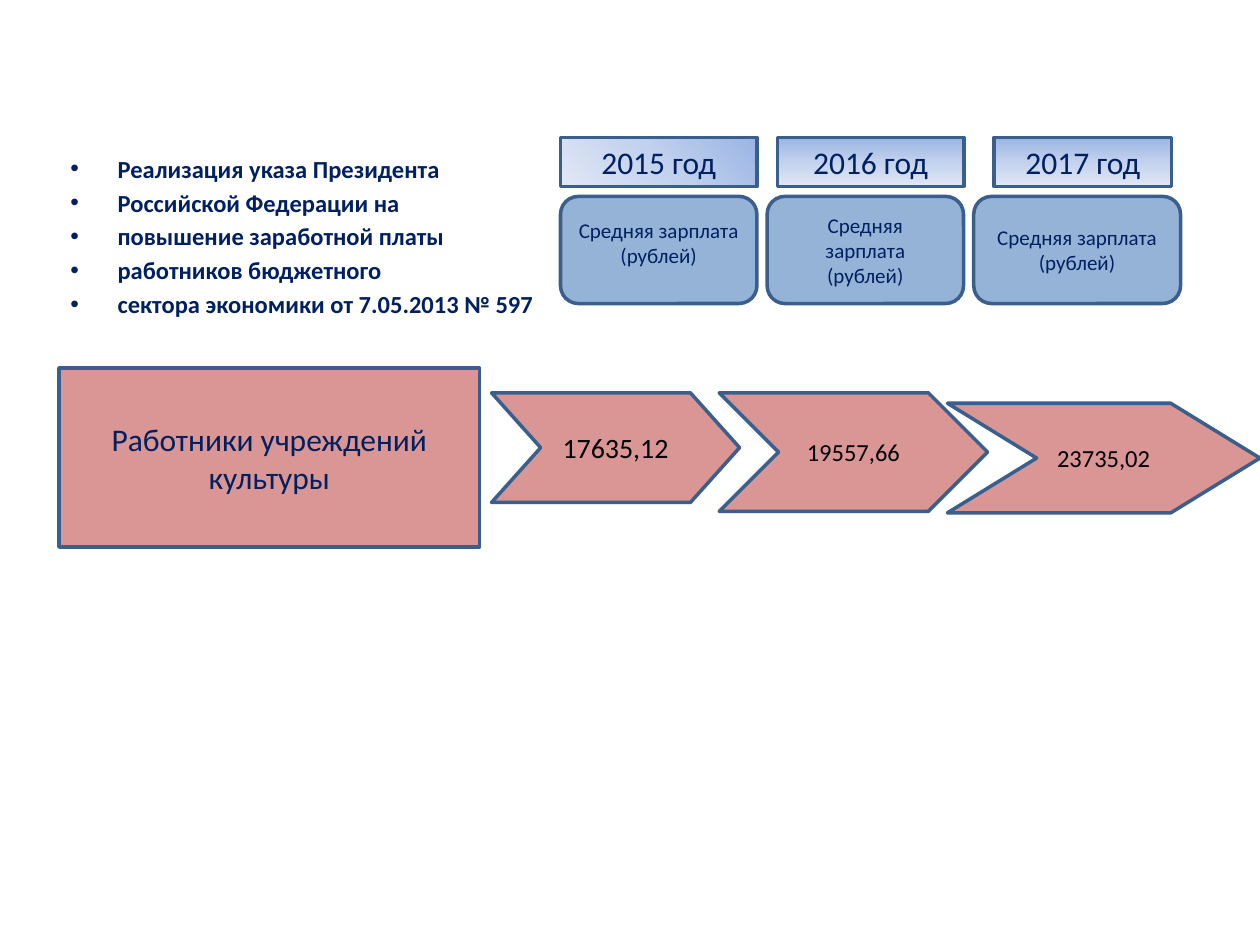
from copy import deepcopy
from dataclasses import dataclass

from lxml import etree
from pptx import Presentation
from pptx.dml.color import RGBColor
from pptx.enum import shapes, text
from pptx.oxml import ns
from pptx.util import Cm, Pt

NAVY, EDGE, BLUE, ROSE = "002060", "3A5F8C", "95B3D7", "D99694"
FADE = ("9AB5E4", "C2D1ED", "E1E8F5")
KIND = shapes.MSO_SHAPE


@dataclass
class Box:
    left: float
    top: float
    width: float
    height: float

    def emu(self):
        return [Cm(v) for v in (self.left, self.top, self.width, self.height)]


@dataclass
class Year:
    """One column: its heading, card and arrow."""
    name: str
    wide: float
    turn: int
    card: float
    side: float
    foot: float
    pay: str
    arrow: Box
    notch: float
    size: int


YEARS = [
    Year("2015 год", 3.96, 135, 3.96, 0.25, 0.43, "17635,12",
         Box(9.91, 7.92, 5, 2.21), 0.448, 16),
    Year("2016 год", 3.76, 90, 3.96, 0.6, 0.13, "19557,66",
         Box(14.5, 7.92, 5.41, 2.39), 0.5, 14),
    Year("2017 год", 3.58, 90, 4.17, 0.25, 0.13, "23735,02",
         Box(19.1, 8.13, 6.3, 2.21), 0.814, 14),
]
ORDER = [
    "Реализация указа Президента",
    "Российской Федерации на",
    "повышение заработной платы",
    "работников бюджетного",
    "сектора экономики от 7.05.2013 № 597",
]


def color(code: str) -> RGBColor:
    return RGBColor.from_string(code)


def write(frame, lines: list, size=18, ink=NAVY, bold=False,
          align=text.PP_ALIGN.CENTER, anchor=text.MSO_ANCHOR.MIDDLE):
    frame.word_wrap = True
    frame.vertical_anchor = anchor
    for i, line in enumerate(lines):
        para = frame.add_paragraph() if i else frame.paragraphs[0]
        para.alignment = align
        run = para.add_run()
        run.text = line
        font = run.font
        font.name, font.size, font.bold = "Calibri", Pt(size), bold
        font.color.rgb = color(ink)


def draw(slide, kind, box: Box, fill: str = ""):
    shape = slide.shapes.add_shape(kind, *box.emu())
    shape.shadow.inherit = False
    shape.line.color.rgb = color(EDGE)
    shape.line.width = Pt(2)
    if fill:
        shape.fill.solid()
        shape.fill.fore_color.rgb = color(fill)
    return shape


def shade(shape, turn: int):
    """Fill with the three-stop fade, turned clockwise."""
    fill = shape.fill
    fill.gradient()
    fill.gradient_angle = 360 - turn
    first = shape.element.spPr.find(".//" + ns.qn("a:gs"))
    first.addnext(deepcopy(first))
    for i, (stop, code) in enumerate(zip(fill.gradient_stops, FADE)):
        stop.position = i / 2
        stop.color.rgb = color(code)


def bullet(para):
    para.space_before = Pt(2.5)
    props = para._p.get_or_add_pPr()
    props.set("marL", str(Cm(0.95)))
    props.set("indent", str(Cm(-0.95)))
    etree.SubElement(props, ns.qn("a:buFont")).set("typeface", "Arial")
    etree.SubElement(props, ns.qn("a:buChar")).set("char", "•")


def column(slide, i: int, year: Year):
    card = draw(slide, KIND.ROUNDED_RECTANGLE,
                Box(11.3 + 4.165 * i, 3.96, year.card, 2.16), BLUE)
    frame = card.text_frame
    frame.margin_left = frame.margin_right = Cm(year.side)
    frame.margin_bottom = Cm(year.foot)
    write(frame, ["Средняя зарплата", "(рублей)"], size=12)

    head = draw(slide, KIND.RECTANGLE,
                Box(11.3 + 4.37 * i, 2.77, year.wide, 0.99))
    shade(head, year.turn)
    write(head.text_frame, [year.name])

    arrow = draw(slide, KIND.CHEVRON, year.arrow, ROSE)
    arrow.adjustments[0] = year.notch
    write(arrow.text_frame, [year.pay], size=year.size, ink="000000")


def main():
    deck = Presentation()
    deck.slide_width, deck.slide_height = Cm(25.4), Cm(19.05)
    slide = deck.slides.add_slide(deck.slide_layouts[6])

    body = slide.shapes.add_textbox(*Box(1.17, 0.91, 22.86, 16.87).emu())
    frame = body.text_frame
    frame.margin_top = Cm(2.19)
    write(frame, ORDER, size=14, bold=True, align=text.PP_ALIGN.LEFT,
          anchor=text.MSO_ANCHOR.TOP)
    for para in frame.paragraphs:
        bullet(para)

    staff = draw(slide, KIND.RECTANGLE, Box(1.19, 7.42, 8.48, 3.61), ROSE)
    write(staff.text_frame, ["Работники учреждений культуры"])
    for i, year in enumerate(YEARS):
        column(slide, i, year)
    deck.save("out.pptx")


if __name__ == "__main__":
    main()
